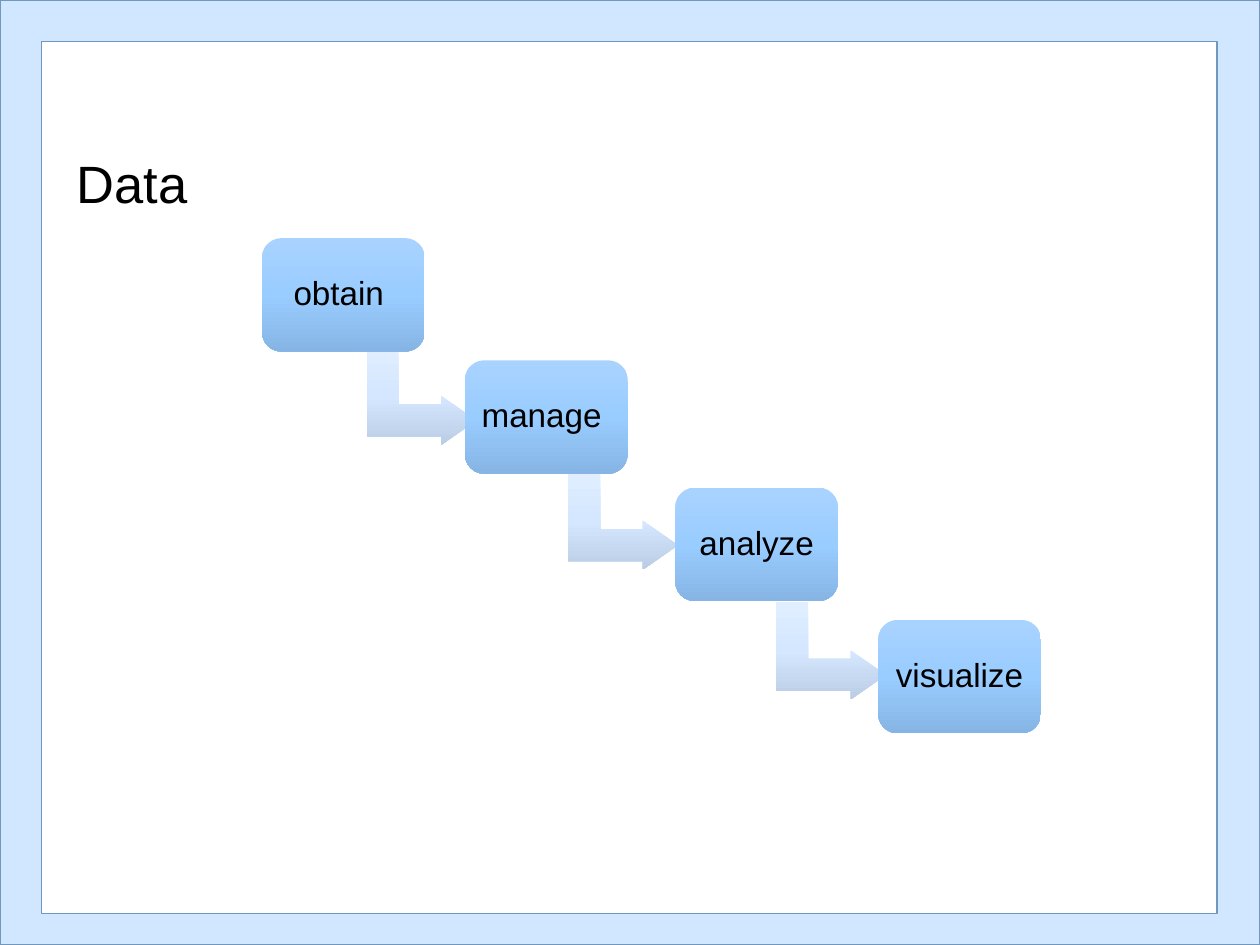
from dataclasses import dataclass

from lxml import etree
from pptx import Presentation
from pptx.dml.color import RGBColor
from pptx.enum.shapes import MSO_SHAPE
from pptx.enum.text import MSO_ANCHOR, MSO_AUTO_SIZE, PP_ALIGN
from pptx.oxml.ns import qn
from pptx.util import Inches, Pt

RECTANGLE = MSO_SHAPE.RECTANGLE
ROUNDED = MSO_SHAPE.ROUNDED_RECTANGLE
BENT_ARROW = MSO_SHAPE.BENT_UP_ARROW
MIDDLE = MSO_ANCHOR.MIDDLE
NO_AUTOFIT = MSO_AUTO_SIZE.NONE
LEFT, CENTER = PP_ALIGN.LEFT, PP_ALIGN.CENTER


@dataclass(frozen=True)
class Theme:
    font: str = "Arial"
    title_size: float = 30
    step_size: float = 19
    text: str = "000000"
    background: str = "70B8FF"
    border: str = "D1E6FF"
    paper: str = "FFFFFF"
    outline: str = "7197BD"
    step_gradient: tuple = ("A9D3FF", "99CCFF", "86B5E5")
    arrow_gradient: tuple = ("E0EEFF", "D4E7FF", "BACDE5")


class ProcessSlide:
    """Draws the parts of a stepped process on one slide in one theme."""

    def __init__(self, slide, theme):
        self.slide = slide
        self.theme = theme
        backdrop = slide.background.fill
        backdrop.solid()
        backdrop.fore_color.rgb = RGBColor.from_string(theme.background)

    def add_shape(self, kind, left, top, width, height):
        shape = self.slide.shapes.add_shape(
            kind, Inches(left), Inches(top), Inches(width), Inches(height))
        shape.shadow.inherit = False
        return shape

    def add_words(self, paragraph, text, size, alignment):
        paragraph.alignment = alignment
        run = paragraph.add_run()
        run.text = text
        run.font.name = self.theme.font
        run.font.size = Pt(size)
        run.font.color.rgb = RGBColor.from_string(self.theme.text)

    def shade(self, shape, colors):
        shape.line.fill.background()
        shape.fill.gradient()
        gradient = shape._element.spPr.find(qn("a:gradFill"))
        gradient.set("rotWithShape", "0")
        stops = gradient.find(qn("a:gsLst"))
        for stop in list(stops):
            stops.remove(stop)
        for index, color in enumerate(colors):
            position = str(100000 * index // (len(colors) - 1))
            stop = etree.SubElement(stops, qn("a:gs"), pos=position)
            etree.SubElement(stop, qn("a:srgbClr"), val=color)
        direction = gradient.find(qn("a:lin"))
        direction.set("ang", "5400000")
        direction.set("scaled", "0")

    def frame(self, left, top, width, height, color):
        panel = self.add_shape(RECTANGLE, left, top, width, height)
        panel.fill.solid()
        panel.fill.fore_color.rgb = RGBColor.from_string(color)
        panel.line.color.rgb = RGBColor.from_string(self.theme.outline)
        panel.line.width = Pt(1)

    def title(self, text, left, top, width, height):
        heading = self.slide.shapes.title
        self.slide.shapes._spTree.append(heading._element)
        heading.left, heading.top = Inches(left), Inches(top)
        heading.width, heading.height = Inches(width), Inches(height)
        frame = heading.text_frame
        frame.auto_size = NO_AUTOFIT
        frame.vertical_anchor = MIDDLE
        self.add_words(frame.paragraphs[0], text, self.theme.title_size, LEFT)

    def arrow(self, left, top):
        bend = self.add_shape(BENT_ARROW, left, top, 0.77, 0.87)
        bend.rotation = 90
        for index, ratio in enumerate((0.33, 0.25, 0.36)):
            bend.adjustments[index] = ratio
        self.shade(bend, self.theme.arrow_gradient)

    def step(self, text, left, top):
        box = self.add_shape(ROUNDED, left, top, 1.29, 0.9)
        box.adjustments[0] = 0.17
        self.shade(box, self.theme.step_gradient)
        frame = box.text_frame
        frame.word_wrap = True
        frame.vertical_anchor = MIDDLE
        frame.margin_left = frame.margin_right = Inches(0.08)
        frame.margin_top = frame.margin_bottom = Inches(0.08)
        label = frame.paragraphs[0]
        label.line_spacing = 0.9
        label.space_after = Pt(0.35 * self.theme.step_size)
        self.add_words(label, text, self.theme.step_size, CENTER)


def main():
    theme = Theme()
    presentation = Presentation()
    presentation.slide_width, presentation.slide_height = Inches(10), Inches(7.5)
    title_only = presentation.slide_layouts[5]
    process = ProcessSlide(presentation.slides.add_slide(title_only), theme)

    process.frame(0, 0, 10, 7.5, theme.border)
    process.frame(0.33, 0.33, 9.33, 6.92, theme.paper)
    process.title("Data", 0.51, 1.14, 9.17, 0.61)

    steps = (
        ("obtain ", (2.08, 1.89), (2.96, 2.71)),
        ("manage ", (3.69, 2.86), (4.56, 3.7)),
        ("analyze", (5.36, 3.87), (6.21, 4.73)),
        ("visualize ", (6.97, 4.92), None),
    )
    for name, box_corner, arrow_corner in steps:
        if arrow_corner:
            process.arrow(*arrow_corner)
        process.step(name, *box_corner)

    presentation.save("out.pptx")


if __name__ == "__main__":
    main()
